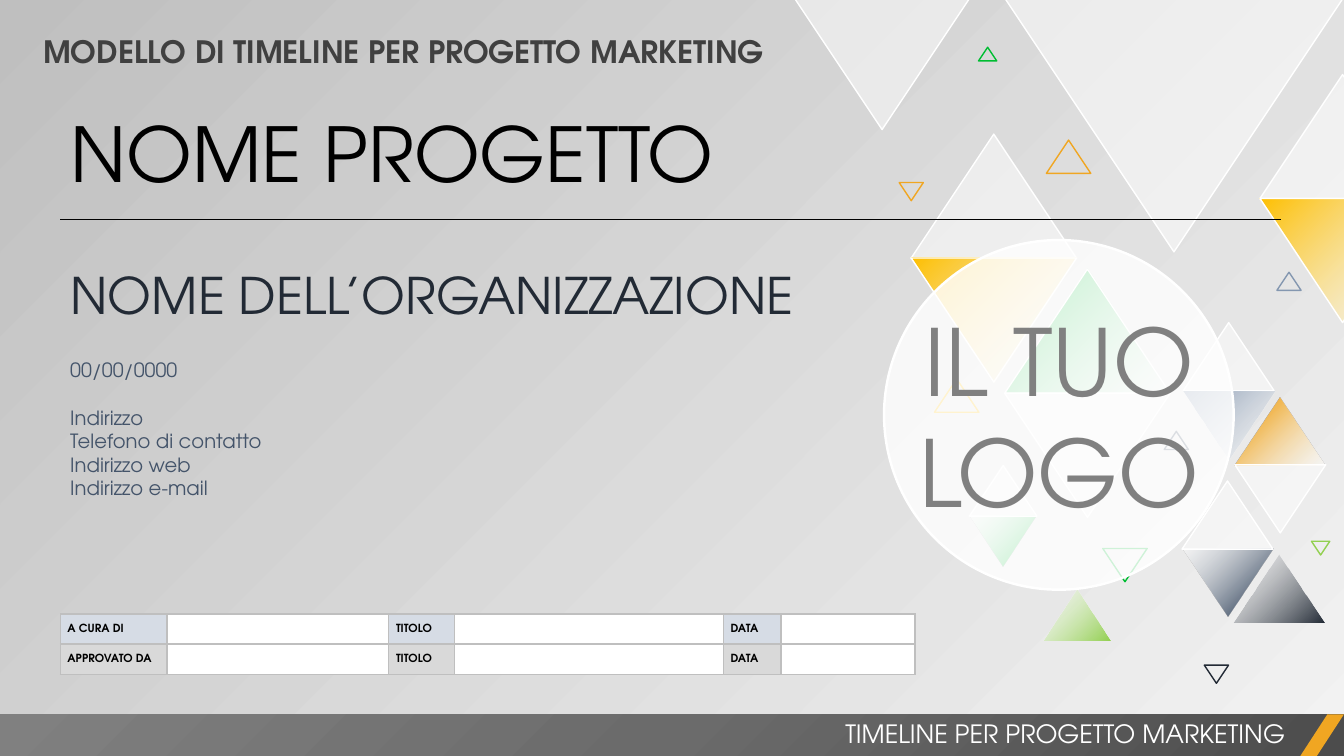
from lxml.etree import SubElement
from pptx import Presentation
from pptx.dml.color import RGBColor
from pptx.enum.shapes import MSO_CONNECTOR, MSO_SHAPE
from pptx.enum.text import MSO_ANCHOR, MSO_AUTO_SIZE, PP_ALIGN
from pptx.oxml.ns import qn
from pptx.util import Cm, Pt

FONT = "TeX Gyre Adventor"
COLORS = {
    "white": "FFFFFF", "black": "000000", "charcoal": "404040", "gray": "808080",
    "silver": "BFBFBF", "pale": "F2F2F2", "bar_dark": "4C4C4C", "bar_mid": "6B6B6B",
    "amber": "FFC000", "orange": "F0A622", "green": "00BD32", "lime": "92D050",
    "navy": "222A35", "slate": "44546A", "steel": "8497B0",
    "label_blue": "D6DCE5", "label_gray": "D9D9D9",
}
TRIANGLES = [
    (22.96, 3.38, 4.17, "up", "glass", "white"),
    (22.96, 6.5, 4.17, "down", "fade", "amber"),
    (25.32, 6.78, 4.17, "up", "glow", "green"),
    (25.32, 9.91, 4.17, "down", "glass", "white"),
    (25.32, -0.05, 8.53, "down", "glass", "white"),
    (31.09, 13.97, 2.29, "up", "fade", "navy"),
    (29.79, 13.82, 2.29, "down", "glow", "slate"),
    (29.79, 12.12, 2.29, "up", "glass", "white"),
    (29.82, 8.13, 2.29, "up", "glass", "white"),
    (29.82, 9.86, 2.29, "down", "fade", "steel"),
    (31.12, 10.01, 2.29, "up", "glow", "orange"),
    (31.12, 11.71, 2.29, "down", "glass", "white"),
    (26.29, 14.86, 1.7, "up", "fade", "lime"),
    (24.43, 13, 1.7, "down", "glow", "green"),
    (24.43, 11.73, 1.7, "up", "glass", "white"),
    (31.75, 1.88, 4.17, "up", "glass", "white"),
    (31.75, 5, 4.17, "down", "fade", "amber"),
    (27.79, 13.82, 1.12, "down", "outline", "green"),
    (23.55, 9.55, 1.12, "up", "outline", "amber"),
    (29.34, 10.87, 0.61, "up", "outline", "slate"),
    (30.35, 16.76, 0.61, "down", "outline", "navy"),
    (22.66, 4.6, 0.61, "down", "outline", "orange"),
    (32.18, 6.86, 0.61, "up", "outline", "steel"),
    (24.66, 1.19, 0.46, "up", "outline", "green"),
    (33.05, 13.64, 0.46, "down", "outline", "lime"),
    (26.37, 3.53, 1.12, "up", "outline", "orange"),
    (20.02, -0.05, 4.42, "down", "glass", "white"),
]
HEADING = [("MODELLO DI TIMELINE PER PROGETTO MARKETING", 22, "charcoal", 0)]
FOOTER = [("TIMELINE PER PROGETTO MARKETING", 18, "white", 0)]
PROJECT = [("NOME PROGETTO", 54, "black", 0)]
DETAILS = [
    ("NOME DELL’ORGANIZZAZIONE", 36, "navy", 0),
    ("00/00/0000", 14, "slate", 24),
    ("Indirizzo", 14, "slate", 17),
    ("Telefono di contatto", 14, "slate", 0),
    ("Indirizzo web", 14, "slate", 0),
    ("Indirizzo e-mail", 14, "slate", 0),
]
LOGO = [("IL TUO", 66, "gray", 0), ("LOGO", 66, "gray", 0)]
SIGNATURES = [
    ("label_blue", ["A CURA DI", "", "TITOLO", "", "DATA", ""]),
    ("label_gray", ["APPROVATO DA", "", "TITOLO", "", "DATA", ""]),
]
COL_WIDTHS = [2.69, 5.59, 1.65, 6.78, 1.45, 3.38]
ROW_HEIGHT = 0.76


def rgb(name):
    return RGBColor.from_string(COLORS[name])


def add_color(parent, name, alpha=100):
    clr = SubElement(parent, qn("a:srgbClr"), val=COLORS[name])
    if alpha < 100:
        SubElement(clr, qn("a:alpha"), val=str(alpha * 1000))


def set_gradient(fill, owner, stops, radial=False):
    fill.gradient()
    grad = owner._element.xpath(".//a:gradFill")[0]
    for child in list(grad):
        grad.remove(child)
    lst = SubElement(grad, qn("a:gsLst"))
    for pos, name, alpha in stops:
        add_color(SubElement(lst, qn("a:gs"), pos=str(pos * 1000)), name, alpha)
    if radial:
        focus = SubElement(grad, qn("a:path"), path="circle")
        SubElement(focus, qn("a:fillToRect"), l="100000", t="100000")
    else:
        SubElement(grad, qn("a:lin"), ang=str(225 * 60000), scaled="0")


def set_solid(sp, name, alpha=100):
    sp.fill.solid()
    sp.fill.fore_color.rgb = rgb(name)
    if alpha < 100:
        clr = sp._element.spPr.find(qn("a:solidFill"))[0]
        SubElement(clr, qn("a:alpha"), val=str(alpha * 1000))


def add_shape(shapes, kind, x, y, w, h, line=None, width=1):
    sp = shapes.add_shape(kind, Cm(x), Cm(y), Cm(w), Cm(h))
    sp.shadow.inherit = False
    if line:
        sp.line.color.rgb = rgb(line)
        sp.line.width = Pt(width)
    else:
        sp.line.fill.background()
    return sp


def add_triangle(shapes, x, y, w, direction, style, color):
    line = color if style == "outline" else "white" if style == "glass" or w > 4 else None
    sp = add_shape(shapes, MSO_SHAPE.ISOSCELES_TRIANGLE, x, y, w, w * 0.75, line)
    sp.rotation = 180 if direction == "down" else 0
    if style == "outline":
        sp.fill.background()
    elif style == "glass":
        set_solid(sp, color, 50)
    elif style == "fade":
        set_gradient(sp.fill, sp, [(0, color, 100), (100, "white", 50)])
    else:
        set_gradient(sp.fill, sp, [(0, "white", 50), (82, color, 100)])


def add_run(p, text, size, color, bold=False):
    r = p.add_run()
    r.text = text
    r.font.name, r.font.size, r.font.bold = FONT, Pt(size), bold
    r.font.color.rgb = rgb(color)


def write_lines(tf, lines, align=PP_ALIGN.LEFT, bold=False):
    for i, (text, size, color, before) in enumerate(lines):
        p = tf.add_paragraph() if i else tf.paragraphs[0]
        p.alignment = align
        p.space_before = Pt(before)
        add_run(p, text, size, color, bold)


def add_text(s, x, y, w, h, lines, **style):
    tf = s.shapes.add_textbox(Cm(x), Cm(y), Cm(w), Cm(h)).text_frame
    tf.word_wrap = True
    tf.auto_size = MSO_AUTO_SIZE.SHAPE_TO_FIT_TEXT
    write_lines(tf, lines, **style)


def add_signatures(s, x, y):
    rows, cols = len(SIGNATURES), len(COL_WIDTHS)
    table = s.shapes.add_table(rows, cols, Cm(x), Cm(y), Cm(sum(COL_WIDTHS)),
                               Cm(rows * ROW_HEIGHT)).table
    table.first_row = table.horz_banding = False
    for col, width in zip(table.columns, COL_WIDTHS):
        col.width = Cm(width)
    for i, (label_fill, texts) in enumerate(SIGNATURES):
        table.rows[i].height = Cm(ROW_HEIGHT)
        for j, text in enumerate(texts):
            cell = table.cell(i, j)
            cell.margin_left = cell.margin_right = Cm(0.18)
            cell.margin_top = cell.margin_bottom = 0
            cell.vertical_anchor = MSO_ANCHOR.MIDDLE
            for side in ("lnL", "lnR", "lnT", "lnB"):
                ln = SubElement(cell._tc.get_or_add_tcPr(), qn("a:" + side), w=str(Pt(1)))
                add_color(SubElement(ln, qn("a:solidFill")), "silver")
            cell.fill.solid()
            cell.fill.fore_color.rgb = rgb(label_fill if text else "white")
            p = cell.text_frame.paragraphs[0]
            if text:
                p.line_spacing = 1.07
                add_run(p, text, 8, "black", True)
            else:
                p._p.get_or_add_endParaRPr().set("sz", "800")


def main():
    """Build the cover slide of a marketing project timeline."""
    prs = Presentation()
    prs.slide_width, prs.slide_height = Cm(33.87), Cm(19.05)
    s = prs.slides.add_slide(prs.slide_layouts[6])
    set_gradient(s.background.fill, s, [(0, "pale", 40), (100, "silver", 100)])

    group = s.shapes.add_group_shape()
    for triangle in TRIANGLES:
        add_triangle(group.shapes, *triangle)
    add_text(s, 0.84, 0.71, 21.87, 1.19, HEADING, bold=True)

    bar = add_shape(s.shapes, MSO_SHAPE.RECTANGLE, 0, 18, 33.87, 1.05)
    set_gradient(bar.fill, bar, [(0, "bar_dark", 100), (50, "bar_mid", 100),
                                 (100, "gray", 100)], radial=True)
    accent = add_shape(s.shapes, MSO_SHAPE.PARALLELOGRAM, 32.77, 18, 1.1, 1.05)
    accent.adjustments[0] = 0.65
    set_solid(accent, "orange")
    add_text(s, 13.34, 17.98, 19.3, 1.02, FOOTER, align=PP_ALIGN.RIGHT)

    add_text(s, 1.52, 2.57, 31.17, 2.57, PROJECT)
    add_text(s, 1.52, 6.53, 22.61, 6.25, DETAILS)
    rule = s.shapes.add_connector(MSO_CONNECTOR.STRAIGHT, Cm(1.52), Cm(5.54), Cm(32.28), Cm(5.54))
    rule.line.color.rgb = rgb("black")
    rule.line.width = Pt(0.5)
    SubElement(rule._element.spPr, qn("a:effectLst"))

    logo = add_shape(s.shapes, MSO_SHAPE.OVAL, 22.28, 6.05, 8.81, 8.81, "white", 1.75)
    set_solid(logo, "white", 81)
    tf = logo.text_frame
    tf.margin_left = tf.margin_right = tf.margin_top = tf.margin_bottom = 0
    tf.word_wrap = False
    tf.vertical_anchor = MSO_ANCHOR.MIDDLE
    write_lines(tf, LOGO, align=PP_ALIGN.CENTER)
    add_signatures(s, 1.52, 15.47)
    prs.save("out.pptx")


if __name__ == "__main__":
    main()
